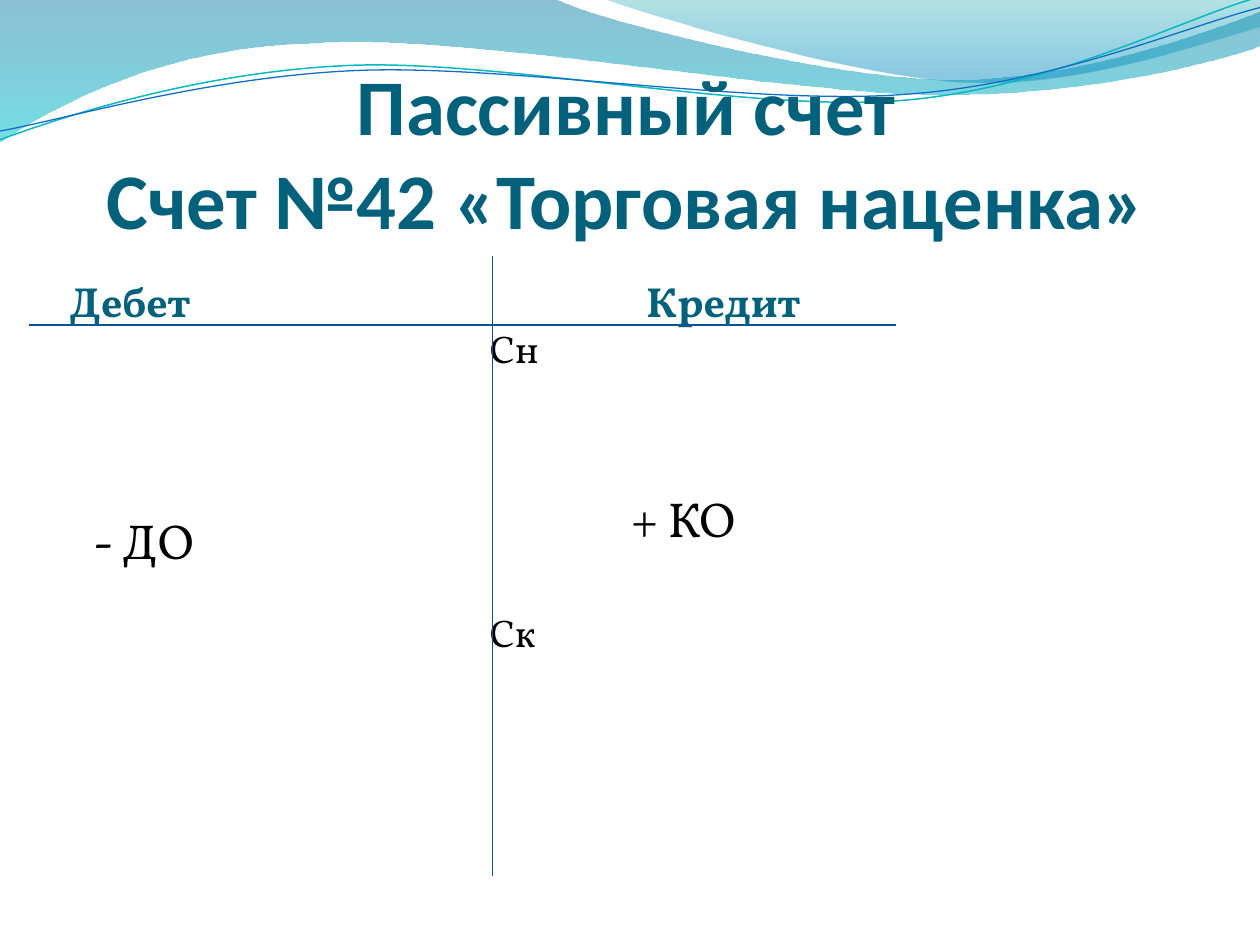
from lxml.etree import SubElement
from pptx import Presentation
from pptx.dml.color import RGBColor
from pptx.enum.shapes import MSO_CONNECTOR
from pptx.enum.text import MSO_ANCHOR, PP_ALIGN
from pptx.oxml.ns import qn
from pptx.util import Inches, Pt

COLORS = {
    "heading": "04617B",
    "text": "000000",
    "axis": "095295",
    "wave_blue": "0074A1",
    "wave_aqua": "00C6CF",
    "crest_teal": "00A1A9",
    "crest_blue": "008BBF",
    "teal_line": "0AB8BF",
    "blue_line": "0F6FC6",
}
BODY_FONT = "Vollkorn"

WAVE = [
    (0, 0), (4.4, -0.01),
    (4.76, 0.17, 6.64, 0.63, 7.58, 0.63), (8.53, 0.63, 9.58, 0.26, 10, 0.09),
    (10.01, 0.36),
    (9.83, 0.44, 8.7, 0.76, 7.46, 0.75), (6.22, 0.75, 3.82, 0.28, 2.57, 0.34),
    (1.29, 0.36, 0.46, 0.83, -0.01, 1.13),
]
CREST = [
    (4.79, -0.01),
    (5.09, 0.11, 6.82, 0.62, 7.69, 0.65), (8.56, 0.69, 9.61, 0.32, 10, 0.21),
    (10, 0),
]
TEAL_CURVE = [
    (0, 1.11),
    (0.48, 0.93, 1.58, 0.57, 2.77, 0.52), (3.95, 0.47, 5.93, 0.89, 7.13, 0.8),
    (8.33, 0.71, 9.38, 0.15, 9.98, -0.02),
]
BLUE_CURVE = [
    (0, 1.04),
    (0.47, 0.96, 1.64, 0.61, 2.83, 0.56), (4.03, 0.51, 5.97, 0.84, 7.17, 0.75),
    (8.36, 0.67, 9.41, 0.21, 10, 0.06),
]


def rgb(name):
    return RGBColor.from_string(COLORS[name])


def bend(outline, segments):
    lines = iter(list(outline._element.spPr.iter(qn("a:lnTo"))))
    for segment in segments[1:]:
        first = next(lines)
        if len(segment) == 6:
            first.tag = qn("a:cubicBezTo")
            for line in (next(lines), next(lines)):
                first.append(line[0])
                line.getparent().remove(line)


def add_outline(slide, segments, close):
    points = [(Inches(segment[i]), Inches(segment[i + 1]))
              for segment in segments for i in range(0, len(segment), 2)]
    builder = slide.shapes.build_freeform(*points[0])
    builder.add_line_segments(points[1:], close=close)
    outline = builder.convert_to_shape()
    bend(outline, segments)
    outline.shadow.inherit = False
    return outline


def add_wave(slide, segments, stops):
    wave = add_outline(slide, segments, True)
    wave.line.fill.background()
    wave.fill.gradient()
    wave.fill.gradient_angle = 270
    for stop, (position, color, _) in zip(wave.fill.gradient_stops, stops):
        stop.position = position
        stop.color.rgb = rgb(color)
    tints = wave._element.spPr.iter(qn("a:srgbClr"))
    for tint, (_, _, opacity) in zip(list(tints), stops):
        SubElement(tint, qn("a:alpha"), val=str(opacity * 1000))


def add_curve(slide, segments, color, width):
    curve = add_outline(slide, segments, False)
    curve.fill.background()
    curve.line.color.rgb = rgb(color)
    curve.line.width = Pt(width)


def add_axis(slide, start, end):
    axis = slide.shapes.add_connector(
        MSO_CONNECTOR.STRAIGHT, *(Inches(v) for v in start + end))
    axis.line.color.rgb = rgb("axis")
    axis.line.width = Pt(0.75)
    SubElement(axis._element.spPr, qn("a:effectLst"))


def add_frame(slide, box, anchor, insets):
    frame = slide.shapes.add_textbox(*(Inches(v) for v in box)).text_frame
    frame.word_wrap = True
    frame.vertical_anchor = anchor
    (frame.margin_left, frame.margin_top,
     frame.margin_right, frame.margin_bottom) = (Inches(v) for v in insets)
    return frame


def style(paragraph, text, size, color, font=BODY_FONT, bold=False):
    paragraph.text = text
    paragraph.font.size = Pt(size)
    paragraph.font.name = font
    paragraph.font.bold = bold
    paragraph.font.color.rgb = rgb(color)


def add_title(slide, text):
    frame = add_frame(slide, (0.47, 0.7, 9, 1.25), MSO_ANCHOR.BOTTOM, (0, 0.05, 0, 0))
    title = frame.paragraphs[0]
    style(title, text, 45, "heading", "Calibri", True)
    title.alignment = PP_ALIGN.CENTER


def add_side_heading(slide, left, text):
    frame = add_frame(slide, (left, 2.03, 4.42, 0.72), MSO_ANCHOR.MIDDLE,
                      (0.05, 0, 0.05, 0))
    style(frame.paragraphs[0], text, 24, "heading", bold=True)


def add_entries(slide, box, top_inset, entries):
    frame = add_frame(slide, box, MSO_ANCHOR.TOP, (0.1, top_inset, 0.1, 0.05))
    for number, (text, size, indent, gap) in enumerate(entries):
        entry = frame.add_paragraph() if number else frame.paragraphs[0]
        style(entry, text, size, "text")
        entry.space_before = Pt(gap)
        entry._p.get_or_add_pPr().set("marL", str(Inches(indent)))


def main():
    deck = Presentation()
    deck.slide_width, deck.slide_height = Inches(10), Inches(7.5)
    slide = deck.slides.add_slide(deck.slide_layouts[6])

    add_wave(slide, WAVE, [(0, "wave_blue", 45), (1, "wave_aqua", 55)])
    add_wave(slide, CREST, [(0, "crest_teal", 30), (0.8, "crest_blue", 45)])
    add_curve(slide, TEAL_CURVE, "teal_line", 0.85)
    add_curve(slide, BLUE_CURVE, "blue_line", 0.75)

    add_title(slide, "Пассивный счет\vСчет №42 «Торговая наценка»")
    add_side_heading(slide, 0.5, "Дебет")
    add_side_heading(slide, 5.08, "Кредит")
    add_entries(slide, (0.5, 2.75, 4.42, 4.21), 1.3, [("- ДО", 28, 0.14, 0)])
    add_entries(slide, (3.67, 2.58, 4.42, 4.12), 0, [
        ("Сн", 22, 0.12, 0),
        ("+ КО", 28, 1.24, 67),
        ("Ск", 22, 0.12, 35),
    ])
    add_axis(slide, (3.91, 2.03), (3.91, 6.95))
    add_axis(slide, (0.23, 2.58), (7.11, 2.58))

    deck.save("out.pptx")


if __name__ == "__main__":
    main()
